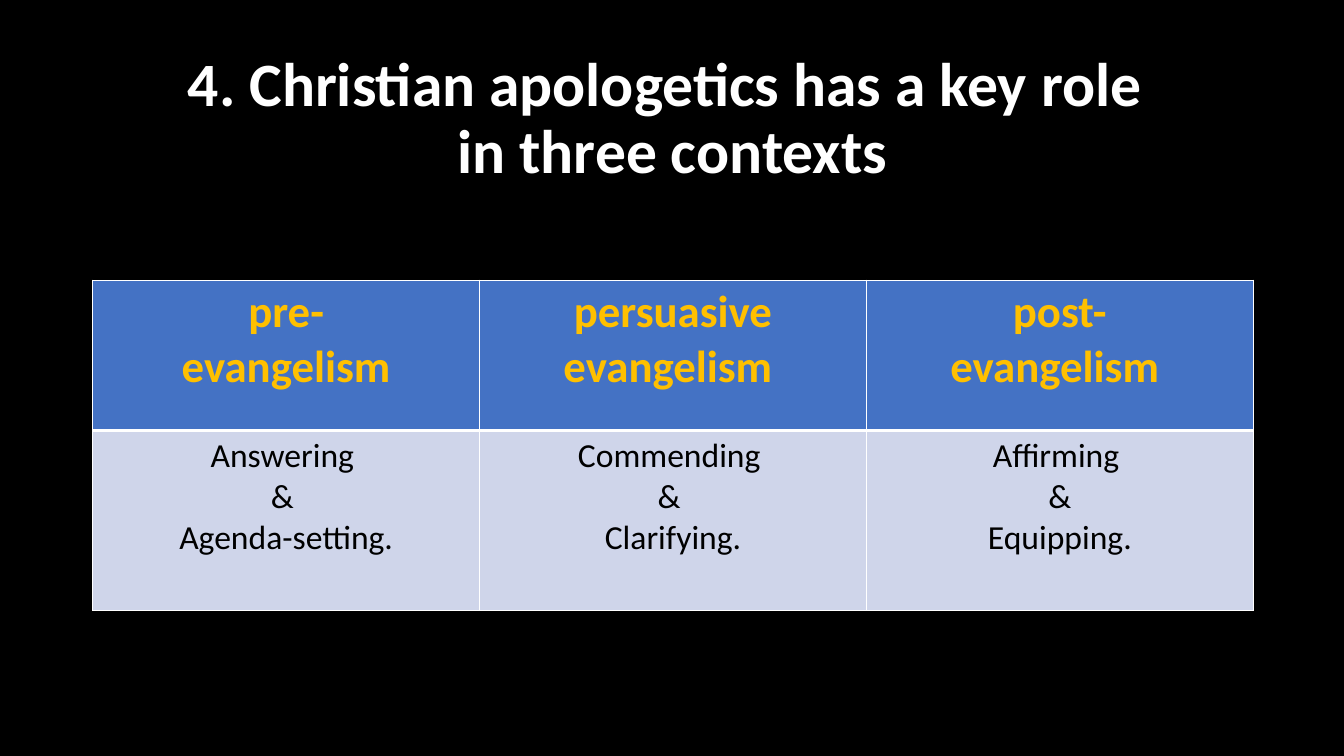
import dataclasses

import pptx
import pptx.dml.color
import pptx.enum.text
import pptx.oxml.ns
import pptx.util
from lxml import etree
from pptx.util import Inches


@dataclasses.dataclass(frozen=True)
class Theme:
    """Colours, font and type sizes of the slide."""
    font: str = "Calibri"
    background: str = "000000"
    title: str = "FFFFFF"
    header: str = "FFC000"
    header_fill: str = "4472C4"
    body: str = "000000"
    body_fill: str = "CFD5EA"
    border: str = "FFFFFF"
    title_size: int = 44
    header_size: int = 32
    body_size: int = 24
    thin: int = 1
    thick: int = 3


THEME = Theme()

CONTEXTS = [
    (["pre-", "evangelism"], ["Answering ", "& ", "Agenda-setting."]),
    (["persuasive evangelism "], ["Commending ", "& ", "Clarifying."]),
    (["post-", "evangelism "], ["Affirming ", "&", "Equipping."]),
]


def rgb(value):
    """Return a colour object for a hex string."""
    return pptx.dml.color.RGBColor.from_string(value)


def write(tf, paragraphs, size, color, bold=False, spacing=None):
    """Fill a text frame with centred paragraphs, breaking lines at newlines."""
    for i, text in enumerate(paragraphs):
        p = tf.add_paragraph() if i else tf.paragraphs[0]
        p.alignment = pptx.enum.text.PP_ALIGN.CENTER
        p.line_spacing = spacing
        for j, line in enumerate(text.split("\n")):
            if j:
                p.add_line_break()
            r = p.add_run()
            r.text = line
            r.font.name = THEME.font
            r.font.size = pptx.util.Pt(size)
            r.font.bold = bold
            r.font.color.rgb = rgb(color)


def add_title(s, text):
    """Place and fill the title placeholder."""
    sp = s.shapes.title
    sp.left, sp.top = Inches(0.92), Inches(0.4)
    sp.width, sp.height = Inches(11.5), Inches(1.58)
    tf = sp.text_frame
    tf.word_wrap = True
    tf.vertical_anchor = pptx.enum.text.MSO_ANCHOR.MIDDLE
    write(tf, [text], THEME.title_size, THEME.title, bold=True, spacing=0.9)


def set_borders(cell, top, bottom):
    """Draw the four cell borders, with thin sides."""
    tcPr = cell._tc.get_or_add_tcPr()
    widths = {"L": THEME.thin, "R": THEME.thin, "T": top, "B": bottom}
    for side, width in widths.items():
        ln = etree.SubElement(tcPr, pptx.oxml.ns.qn(f"a:ln{side}"),
                              w=str(pptx.util.Pt(width)))
        fill = etree.SubElement(ln, pptx.oxml.ns.qn("a:solidFill"))
        etree.SubElement(fill, pptx.oxml.ns.qn("a:srgbClr"), val=THEME.border)


def fill_cell(cell, paragraphs, fill, top, bottom, **style):
    """Write one cell with its borders and fill."""
    set_borders(cell, top, bottom)
    cell.fill.solid()
    cell.fill.fore_color.rgb = rgb(fill)
    write(cell.text_frame, paragraphs, **style)


def add_contexts_table(s, contexts):
    """Add a table with one column for each context."""
    heights = [Inches(1.49), Inches(1.79)]
    table = s.shapes.add_table(2, len(contexts), Inches(0.92), Inches(2.78),
                               Inches(11.51), sum(heights)).table
    for row, height in zip(table.rows, heights):
        row.height = height
    for col, (heading, roles) in enumerate(contexts):
        fill_cell(table.cell(0, col), heading, THEME.header_fill,
                  THEME.thin, THEME.thick,
                  size=THEME.header_size, color=THEME.header, bold=True)
        fill_cell(table.cell(1, col), roles, THEME.body_fill,
                  THEME.thick, THEME.thin,
                  size=THEME.body_size, color=THEME.body)


def main():
    """Build and save the slide."""
    prs = pptx.Presentation()
    prs.slide_width, prs.slide_height = Inches(13.33), Inches(7.5)
    s = prs.slides.add_slide(prs.slide_layouts[5])
    s.background.fill.solid()
    s.background.fill.fore_color.rgb = rgb(THEME.background)
    add_title(s, "4. Christian apologetics has a key role \nin three contexts")
    add_contexts_table(s, CONTEXTS)
    prs.save("out.pptx")


if __name__ == "__main__":
    main()
